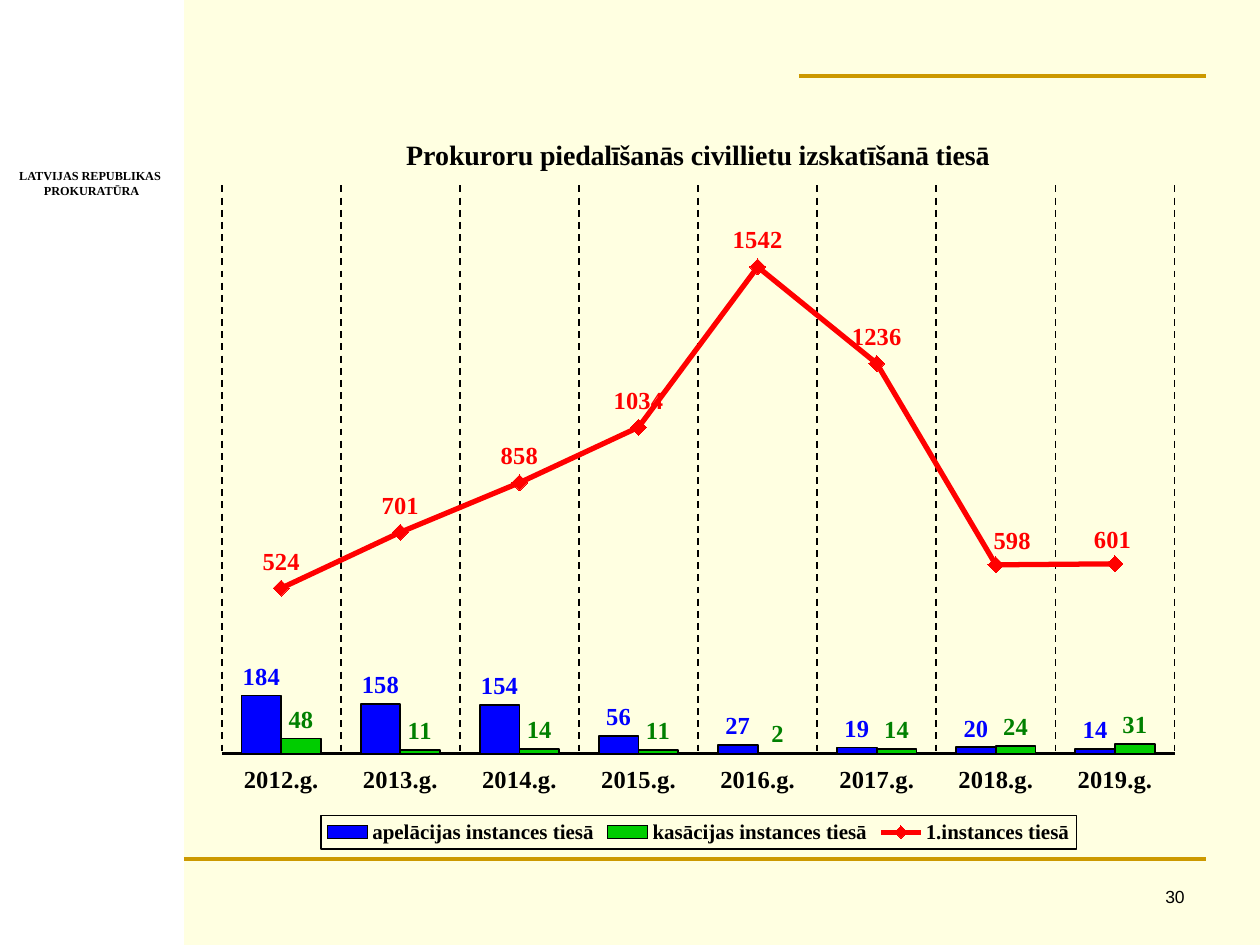
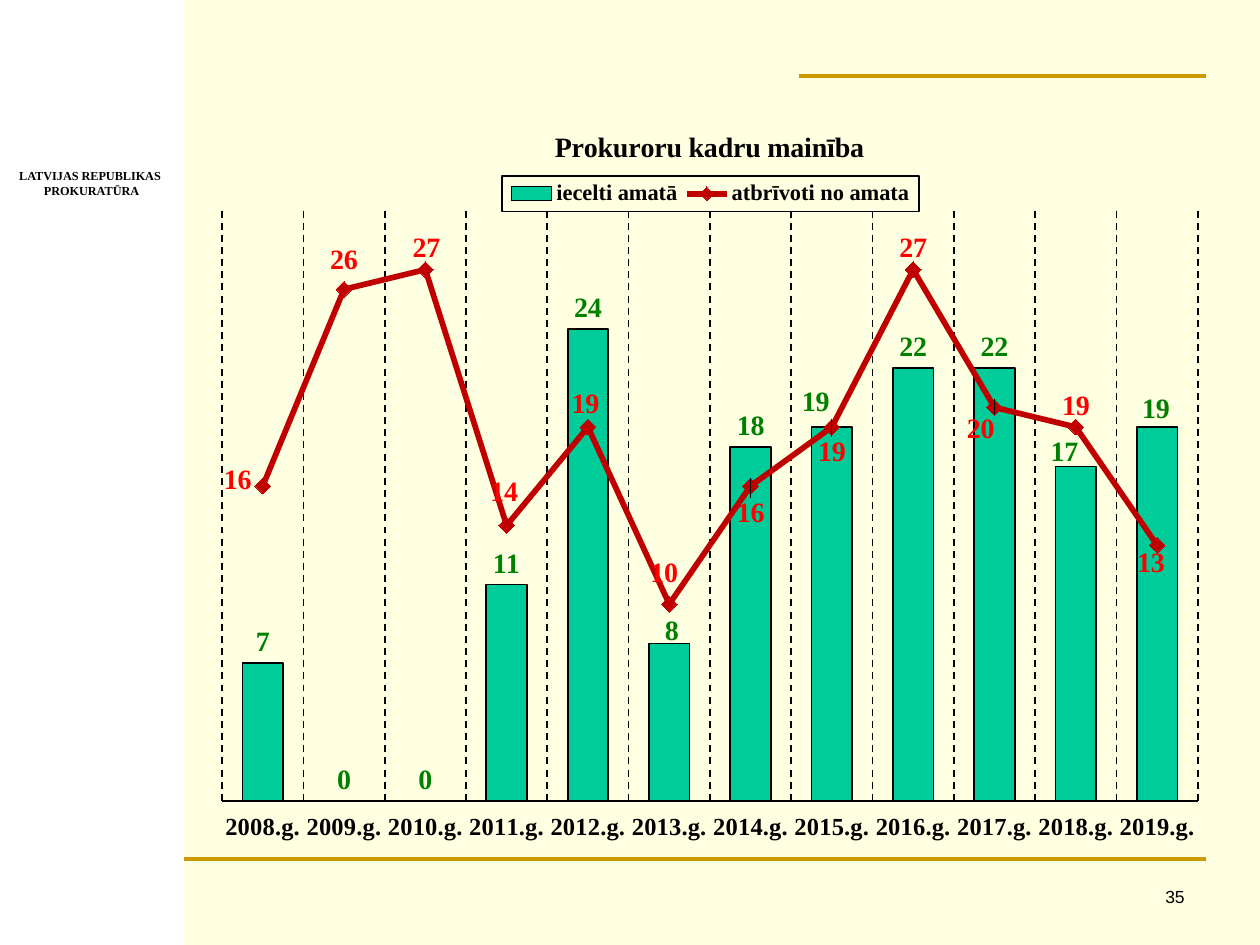
from dataclasses import dataclass, field
from typing import Optional

from lxml import etree
from pptx import Presentation
from pptx.chart.chart import Chart
from pptx.chart.data import CategoryChartData
from pptx.dml.color import RGBColor
from pptx.enum.chart import (XL_CHART_TYPE, XL_LABEL_POSITION, XL_LEGEND_POSITION,
                             XL_MARKER_STYLE, XL_TICK_LABEL_POSITION, XL_TICK_MARK)
from pptx.enum.dml import MSO_LINE
from pptx.enum.shapes import MSO_CONNECTOR, MSO_SHAPE
from pptx.enum.text import PP_ALIGN
from pptx.oxml import parse_xml
from pptx.oxml.ns import nsdecls, qn
from pptx.slide import Slide
from pptx.util import Inches, Pt

CREAM = RGBColor(0xFF, 0xFF, 0xE1)
WHITE = RGBColor(0xFF, 0xFF, 0xFF)
BLACK = RGBColor(0x00, 0x00, 0x00)
GOLD = RGBColor(0xCC, 0x99, 0x00)
BLUE = RGBColor(0x00, 0x00, 0xFF)
LIME = RGBColor(0x00, 0xCC, 0x00)
GREEN = RGBColor(0x00, 0x80, 0x00)
TEAL = RGBColor(0x00, 0xCC, 0x99)
RED = RGBColor(0xFF, 0x00, 0x00)
DARK_RED = RGBColor(0xC0, 0x00, 0x00)
YELLOW = RGBColor(0xFF, 0xFF, 0x00)

SERIF = "Times New Roman"
SANS = "Arial"
CENTER, RIGHT = PP_ALIGN.CENTER, PP_ALIGN.RIGHT
COLUMNS = XL_CHART_TYPE.COLUMN_CLUSTERED
OUTSIDE_END, ABOVE = XL_LABEL_POSITION.OUTSIDE_END, XL_LABEL_POSITION.ABOVE
LEGEND_TOP, LEGEND_BOTTOM = XL_LEGEND_POSITION.TOP, XL_LEGEND_POSITION.BOTTOM
DIAMOND = XL_MARKER_STYLE.DIAMOND
NO_TICK = XL_TICK_MARK.NONE
LABELS_LOW = XL_TICK_LABEL_POSITION.LOW
DASH = MSO_LINE.DASH
STRAIGHT = MSO_CONNECTOR.STRAIGHT
RECTANGLE = MSO_SHAPE.RECTANGLE


@dataclass
class SeriesStyle:
    name: str
    values: tuple[int, ...]
    color: RGBColor
    label_color: RGBColor
    line_width: Optional[float] = None
    label_shifts: dict[int, tuple[float, float]] = field(default_factory=dict)


@dataclass
class ChartSlide:
    number: int
    title: str
    first_year: int
    box: tuple[float, float, float, float]
    title_place: tuple[float, float]
    plot_place: tuple[float, float, float, float]
    legend_place: tuple[float, float, float, float]
    legend_position: XL_LEGEND_POSITION
    legend_size: float
    label_size: int
    overlap: int
    maximum: int
    series: list[SeriesStyle]


CHART_SLIDES = [
    ChartSlide(
        30, "Prokuroru piedalīšanās civillietu izskatīšanā tiesā", 2012,
        (1.61, 0.84, 7.87, 5.91), (0.2, 0.035), (0.019, 0.107, 0.961, 0.763),
        (0.119, 0.953, 0.762, 0.045), LEGEND_BOTTOM, 12, 14, 0, 1800,
        [
            SeriesStyle("apelācijas instances tiesā",
                        (184, 158, 154, 56, 27, 19, 20, 14), BLUE, BLUE),
            SeriesStyle("kasācijas instances tiesā",
                        (48, 11, 14, 11, 2, 14, 24, 31), LIME, GREEN),
            SeriesStyle("1.instances tiesā",
                        (524, 701, 858, 1034, 1542, 1236, 598, 601), RED, RED, 3,
                        {6: (0.13, 0.02), 7: (-0.02, 0.02)}),
        ]),
    ChartSlide(
        35, "Prokuroru kadru mainība", 2008,
        (1.61, 0.77, 8.05, 5.97), (0.342, 0.036), (0.019, 0.151, 0.962, 0.785),
        (0.295, 0.105, 0.411, 0.047), LEGEND_TOP, 12.8, 16, -27, 30,
        [
            SeriesStyle("iecelti amatā",
                        (7, 0, 0, 11, 24, 8, 18, 19, 22, 22, 17, 19), TEAL, GREEN, None,
                        {5: (0.02, 0.07), 7: (-0.13, -0.03),
                         10: (-0.09, 0.05), 11: (-0.01, 0.02)}),
            SeriesStyle("atbrīvoti no amata",
                        (16, 26, 27, 14, 19, 10, 16, 19, 27, 20, 19, 13), DARK_RED, RED, 3.25,
                        {0: (-0.2, 0.18), 2: (0.01, 0.06), 3: (-0.02, -0.04),
                         4: (-0.02, 0.05), 5: (-0.04, -0.02), 6: (0, 0.44),
                         7: (0, 0.43), 8: (0, 0.06), 9: (-0.11, 0.4),
                         10: (0, 0.06), 11: (-0.05, 0.37)}),
        ]),
]


def format_font(font, size: float, color: RGBColor = BLACK, bold: bool = True,
                name: str = SERIF) -> None:
    font.size, font.bold, font.name = Pt(size), bold, name
    font.color.rgb = color


def write_text(text_frame, text: str, align: PP_ALIGN = CENTER, **font_format) -> None:
    for index, line in enumerate(text.split("\n")):
        paragraph = text_frame.add_paragraph() if index else text_frame.paragraphs[0]
        paragraph.alignment = align
        run = paragraph.add_run()
        run.text = line
        format_font(run.font, **font_format)


def add_text_box(slide: Slide, box: tuple[float, ...], text: str, wrap: bool = True,
                 **text_format) -> None:
    text_frame = slide.shapes.add_textbox(*map(Inches, box)).text_frame
    text_frame.word_wrap = wrap
    write_text(text_frame, text, **text_format)


def add_rule(slide: Slide, left: float, right: float, top: float) -> None:
    rule = slide.shapes.add_connector(
        STRAIGHT, Inches(left), Inches(top), Inches(right), Inches(top))
    rule.line.color.rgb = GOLD
    rule.line.width = Pt(2.25)
    etree.SubElement(rule._element.spPr, qn("a:effectLst"))


def add_frame(slide: Slide, number: int) -> None:
    slide.background.fill.solid()
    slide.background.fill.fore_color.rgb = CREAM
    panel = slide.shapes.add_shape(RECTANGLE, 0, 0, Inches(1.46), Inches(7.5))
    panel.shadow.inherit = False
    panel.fill.solid()
    panel.fill.fore_color.rgb = WHITE
    panel.line.fill.background()
    add_rule(slide, 1.46, 9.57, 6.82)
    add_rule(slide, 6.34, 9.57, 0.6)
    add_text_box(slide, (0.05, 1.29, 1.33, 0.33), "LATVIJAS REPUBLIKAS\n PROKURATŪRA",
                 wrap=False, size=7)
    add_text_box(slide, (7.42, 6.98, 2.08, 0.35), str(number), align=RIGHT,
                 size=10, bold=False, name=SANS)


def set_layout(parent, position: int, place: tuple[float, ...], inner: bool = False,
               edge: bool = True) -> None:
    for previous in parent.findall(qn("c:layout")):
        parent.remove(previous)
    layout = etree.Element(qn("c:layout"))
    manual = etree.SubElement(layout, qn("c:manualLayout"))
    settings = [("layoutTarget", "inner")] if inner else []
    if edge:
        settings += [("xMode", "edge"), ("yMode", "edge")]
    settings += [(key, f"{value:.4f}") for key, value in zip("xywh", place)]
    for key, value in settings:
        etree.SubElement(manual, qn(f"c:{key}")).set("val", value)
    parent.insert(position, layout)


def make_shape_format(outline: str):
    return parse_xml(
        f'<c:spPr {nsdecls("c", "a")}><a:solidFill><a:srgbClr val="{CREAM}"/></a:solidFill>'
        f'<a:ln w="12700">{outline}</a:ln></c:spPr>')


def move_to_line_plot(chart: Chart) -> None:
    bar_plot = chart.element.find(".//" + qn("c:barChart"))
    line_plot = parse_xml(
        f'<c:lineChart {nsdecls("c")}><c:grouping val="standard"/>'
        '<c:varyColors val="0"/><c:marker val="1"/></c:lineChart>')
    series = bar_plot.findall(qn("c:ser"))[-1]
    for invert in series.findall(qn("c:invertIfNegative")):
        series.remove(invert)
    line_plot.insert(2, series)
    for axis in bar_plot.findall(qn("c:axId")):
        etree.SubElement(line_plot, qn("c:axId")).set("val", axis.get("val"))
    bar_plot.addnext(line_plot)


def format_series(series, style: SeriesStyle, content: ChartSlide) -> None:
    line = series.format.line
    if style.line_width is None:
        position = OUTSIDE_END
        series.format.fill.solid()
        series.format.fill.fore_color.rgb = style.color
        series.invert_if_negative = False
        line.color.rgb, line.width = BLACK, Pt(1)
    else:
        position = ABOVE
        line.color.rgb, line.width = style.color, Pt(style.line_width)
        series.smooth = False
        marker = series.marker
        marker.style, marker.size = DIAMOND, 9
        marker.format.fill.solid()
        marker.format.fill.fore_color.rgb = YELLOW
        marker.format.line.color.rgb = style.color
    labels = series.data_labels
    labels.show_value = True
    labels.position = position
    format_font(labels.font, content.label_size, style.label_color)
    width, height = content.box[2:]
    for index, (right, down) in style.label_shifts.items():
        label = series.points[index].data_label
        label.position = position
        format_font(label.font, content.label_size, style.label_color)
        element = series._element.xpath(f"c:dLbls/c:dLbl[c:idx/@val={index}]")[0]
        set_layout(element, 1, (right / width, down / height), edge=False)


def format_axes(chart: Chart, maximum: int) -> None:
    years = chart.category_axis
    years.major_tick_mark = years.minor_tick_mark = NO_TICK
    years.tick_label_position = LABELS_LOW
    format_font(years.tick_labels.font, 14)
    years.format.line.color.rgb = BLACK
    years.format.line.width = Pt(1.5)
    years.has_major_gridlines = True
    grid = years.major_gridlines.format.line
    grid.color.rgb, grid.width, grid.dash_style = BLACK, Pt(1), DASH
    values = chart.value_axis
    values.minimum_scale, values.maximum_scale = 0, maximum
    values.has_major_gridlines = False
    values.visible = False


def add_combined_chart(slide: Slide, content: ChartSlide) -> None:
    data = CategoryChartData()
    year_count = len(content.series[0].values)
    data.categories = [f"{content.first_year + step}.g." for step in range(year_count)]
    for style in content.series:
        data.add_series(style.name, style.values)
    chart = slide.shapes.add_chart(COLUMNS, *map(Inches, content.box), data).chart
    format_font(chart.font, 10, bold=False)
    chart.element.find(qn("c:chart")).addnext(make_shape_format("<a:noFill/>"))

    chart.has_title = True
    write_text(chart.chart_title.text_frame, content.title, size=16)
    set_layout(chart.element.find(".//" + qn("c:title")), 1, content.title_place)
    set_layout(chart.element.find(".//" + qn("c:plotArea")), 0, content.plot_place, inner=True)

    chart.has_legend = True
    chart.legend.position = content.legend_position
    chart.legend.include_in_layout = False
    format_font(chart.legend.font, content.legend_size)
    legend = chart.element.find(".//" + qn("c:legend"))
    set_layout(legend, 1, content.legend_place)
    legend.find(qn("c:txPr")).addprevious(make_shape_format(
        f'<a:solidFill><a:srgbClr val="{BLACK}"/></a:solidFill>'))

    move_to_line_plot(chart)
    columns = chart.plots[0]
    columns.gap_width, columns.overlap = 100, content.overlap
    for plot in chart.plots:
        plot.vary_by_categories = False
    for series, style in zip(chart.series, content.series):
        format_series(series, style, content)
    format_axes(chart, content.maximum)


def main() -> None:
    presentation = Presentation()
    presentation.slide_width, presentation.slide_height = Inches(10), Inches(7.5)
    for content in CHART_SLIDES:
        slide = presentation.slides.add_slide(presentation.slide_layouts[6])
        add_frame(slide, content.number)
        add_combined_chart(slide, content)
    presentation.save("out.pptx")


if __name__ == "__main__":
    main()
